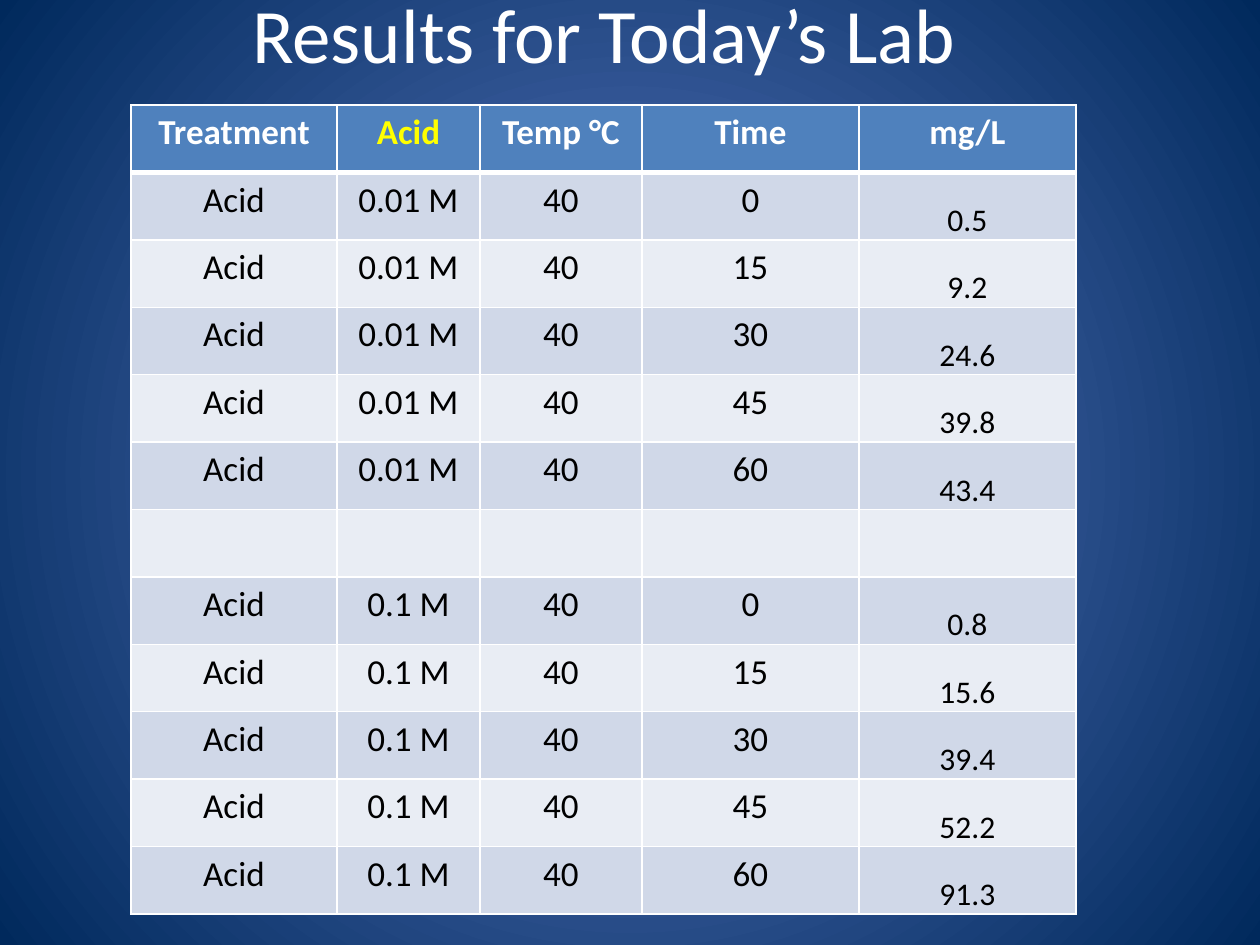
from dataclasses import dataclass

from lxml.etree import SubElement
from pptx import Presentation
from pptx.dml.color import RGBColor
from pptx.enum.text import MSO_ANCHOR, PP_ALIGN
from pptx.oxml import parse_xml
from pptx.oxml.ns import nsdecls, qn
from pptx.util import Emu, Pt


@dataclass(frozen=True)
class Theme:
    font: str = "Calibri"
    glow: str = "5E7CC5"
    navy: str = "00295C"
    white: str = "FFFFFF"
    black: str = "000000"
    yellow: str = "FFFF00"
    header: str = "4F81BD"
    bands: tuple = ("D0D8E8", "E9EDF4")
    title_size: int = 44
    cell_size: int = 20
    result_size: int = 18


theme = Theme()


def px(length):
    """Turn px, at 126 to the inch, into EMU."""
    return Emu(round(length * 914400 / 126))


def set_borders(cell, bottom_points):
    """Draw white cell edges: 1 pt, with the bottom edge as given."""
    properties = cell._tc.get_or_add_tcPr()
    for side, points in (("L", 1), ("R", 1), ("T", 1), ("B", bottom_points)):
        line = SubElement(properties, qn(f"a:ln{side}"), w=str(Pt(points)))
        fill = SubElement(line, qn("a:solidFill"))
        SubElement(fill, qn("a:srgbClr"), val=theme.white)


presentation = Presentation()
presentation.slide_width, presentation.slide_height = px(1260), px(945)
slide = presentation.slides.add_slide(presentation.slide_layouts[5])

# Background: a radial glow
background = slide.background.fill
background.gradient()
gradient = slide._element.cSld.find(".//" + qn("a:gradFill"))
gradient.getparent().replace(gradient, parse_xml(
    f'<a:gradFill {nsdecls("a")} rotWithShape="1"><a:gsLst>'
    f'<a:gs pos="0"><a:srgbClr val="{theme.glow}"/></a:gs>'
    f'<a:gs pos="100000"><a:srgbClr val="{theme.navy}"/></a:gs></a:gsLst>'
    '<a:path path="circle"><a:fillToRect l="50000" t="50000" r="50000" b="50000"/></a:path>'
    '</a:gradFill>'))

# Title
title = slide.shapes.title
title.left, title.top, title.width, title.height = px(37), px(-21), px(1134), px(108)
title.text_frame.text = "Results for Today’s Lab"
title.text_frame.vertical_anchor = MSO_ANCHOR.MIDDLE
paragraph = title.text_frame.paragraphs[0]
paragraph.alignment = PP_ALIGN.CENTER
paragraph.font.name = theme.font
paragraph.font.size = Pt(theme.title_size)
paragraph.font.color.rgb = RGBColor.from_string(theme.white)

# Results table: two acid strengths, parted by an empty row
headings = ["Treatment", "Acid", "Temp °C", "Time", "mg/L"]
column_widths = [206, 143, 162, 217, 217]
times = ["0", "15", "30", "45", "60"]
weak_results = ["0.5", "9.2", "24.6", "39.8", "43.4"]
strong_results = ["0.8", "15.6", "39.4", "52.2", "91.3"]
rows = [
    headings,
    *[["Acid", "0.01 M", "40", *pair] for pair in zip(times, weak_results)],
    [""] * len(headings),
    *[["Acid", "0.1 M", "40", *pair] for pair in zip(times, strong_results)],
]

table = slide.shapes.add_table(
    len(rows), len(headings), px(131), px(105), px(sum(column_widths)), px(809)).table
for column, width in zip(table.columns, column_widths):
    column.width = px(width)

for row_index, row in enumerate(rows):
    is_header = row_index == 0
    fill_color = theme.header if is_header else theme.bands[(row_index - 1) % 2]
    for heading, text, cell in zip(headings, row, table.rows[row_index].cells):
        set_borders(cell, 3 if is_header else 1)
        cell.fill.solid()
        cell.fill.fore_color.rgb = RGBColor.from_string(fill_color)
        if not text:
            continue

        is_result = heading == "mg/L" and not is_header
        if is_result:
            cell.vertical_anchor = MSO_ANCHOR.BOTTOM
            cell.margin_left = cell.margin_right = cell.margin_top = px(1)
            cell.margin_bottom = 0

        text_color = theme.black
        if is_header:
            text_color = theme.yellow if heading == "Acid" else theme.white

        cell.text = text
        paragraph = cell.text_frame.paragraphs[0]
        paragraph.alignment = PP_ALIGN.CENTER
        paragraph.font.name = theme.font
        paragraph.font.size = Pt(theme.result_size if is_result else theme.cell_size)
        paragraph.font.bold = is_header
        paragraph.font.color.rgb = RGBColor.from_string(text_color)

presentation.save("out.pptx")
